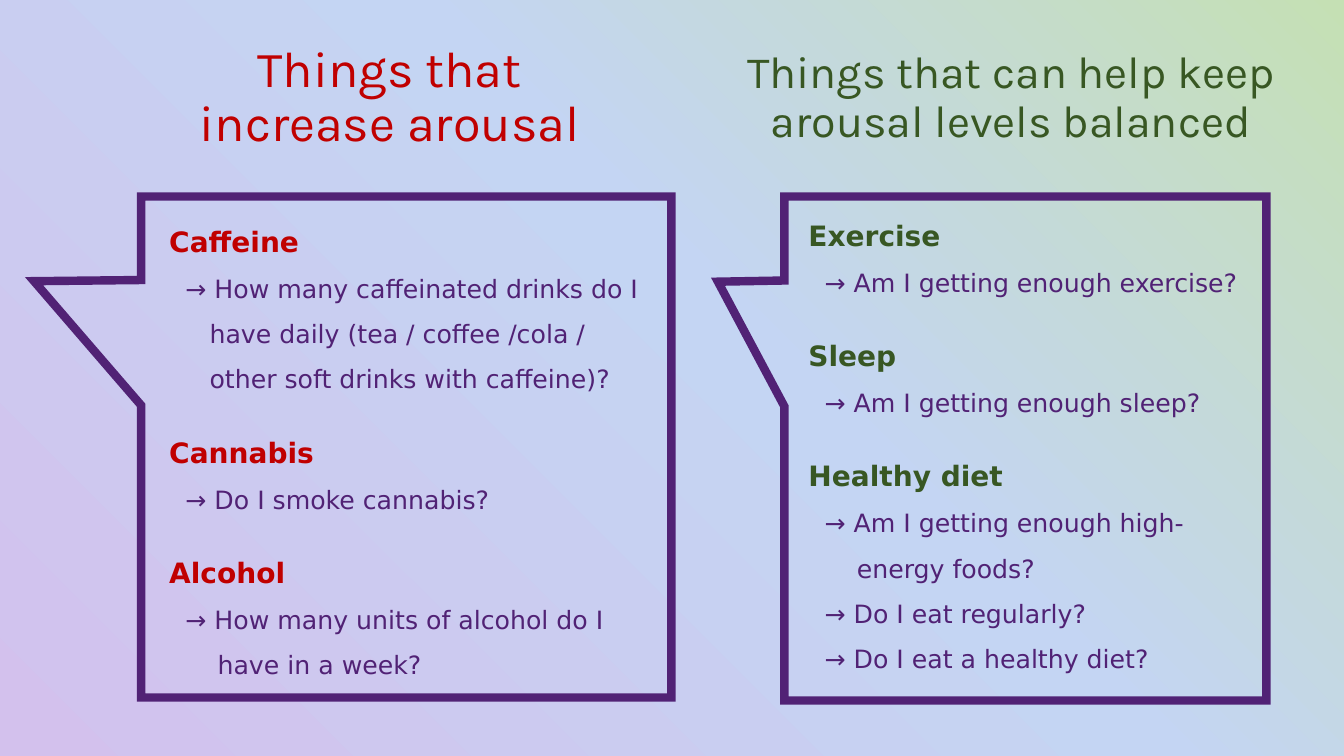
from dataclasses import dataclass
from pptx import Presentation
from pptx.dml.color import RGBColor
from pptx.enum.shapes import MSO_SHAPE as SHAPE
from pptx.enum.text import MSO_ANCHOR as ANCHOR, MSO_AUTO_SIZE as AUTO, PP_ALIGN as ALIGN
from pptx.oxml import parse_xml
from pptx.oxml.ns import nsdecls
from pptx.util import Inches, Pt


@dataclass(frozen=True)
class Theme:
    red: str = "C00000"
    green: str = "385723"
    purple: str = "512275"
    gradient: tuple = ((0, "D3C1ED"), (56, "C4D5F3"), (100, "C5E0B4"))
    title_font: str = "Karla"
    body_font: str = "DejaVu Sans"
    heading_size: int = 20
    question_size: int = 18
    border: int = 6


theme = Theme()
SLIDE = (13.33, 7.5)
ARROW_LEFT = 0.16
TOPIC_GAP = 17.5

panels = [
    dict(
        title="Things that increase arousal", title_size=36, color=theme.red,
        title_box=(1.58, 0.33, 4.57, 1.29), callout=(1.4, 1.95, 5.26, 4.97),
        pointer=(-0.702, -0.331), body=(1.58, 2.01, 5.08, 4.85),
        topics=[
            ("Caffeine", 0.4, [("How many caffeinated drinks do I",
                                "have daily (tea / coffee /cola /",
                                "other soft drinks with caffeine)?")]),
            ("Cannabis", 0.48, [("Do I smoke cannabis?",)]),
            ("Alcohol", 0.48, [("How many units of alcohol do I", "have in a week?")]),
        ],
    ),
    dict(
        title="Things that can help keep arousal levels balanced", title_size=32,
        color=theme.green,
        title_box=(6.91, 0.42, 6.24, 1.11), callout=(7.78, 1.95, 4.78, 5),
        pointer=(-0.638, -0.331), body=(7.92, 1.95, 4.63, 4.85),
        topics=[
            ("Exercise", 0.48, [("Am I getting enough exercise?",)]),
            ("Sleep", 0.48, [("Am I getting enough sleep?",)]),
            ("Healthy diet", 0.48, [("Am I getting enough high-", "energy foods?"),
                                    ("Do I eat regularly?",),
                                    ("Do I eat a healthy diet?",)]),
        ],
    ),
]


def inches(box):
    return [Inches(v) for v in box]


def add_run(p, text, font, size, color, bold=False):
    r = p.add_run()
    r.text = text
    r.font.name, r.font.size, r.font.bold = font, Pt(size), bold
    r.font.color.rgb = RGBColor.from_string(color)


def add_backdrop(s):
    sp = s.shapes.add_shape(SHAPE.RECTANGLE, 0, 0, *inches(SLIDE))
    sp.shadow.inherit = False
    sp.line.fill.background()
    sp.fill.background()
    stops = "".join(
        f'<a:gs pos="{pos * 1000}"><a:srgbClr val="{color}"/></a:gs>'
        for pos, color in theme.gradient
    )
    gradient = parse_xml(
        f'<a:gradFill {nsdecls("a")} rotWithShape="1"><a:gsLst>{stops}</a:gsLst>'
        '<a:path path="circle"><a:fillToRect t="100000" r="100000"/></a:path></a:gradFill>'
    )
    props = sp._element.spPr
    props.replace(props.find("{*}noFill"), gradient)
    return sp


def add_callout(s, panel):
    sp = s.shapes.add_shape(SHAPE.RECTANGULAR_CALLOUT, *inches(panel["callout"]))
    sp.shadow.inherit = False
    sp.fill.background()
    sp.line.color.rgb = RGBColor.from_string(theme.purple)
    sp.line.width = Pt(theme.border)
    sp.line._ln.append(parse_xml(f'<a:miter {nsdecls("a")} lim="800000"/>'))
    for i, value in enumerate(panel["pointer"]):
        sp.adjustments[i] = value


def fill_title(sp, panel):
    sp.left, sp.top, sp.width, sp.height = inches(panel["title_box"])
    tf = sp.text_frame
    tf.word_wrap, tf.auto_size = True, AUTO.NONE
    tf.vertical_anchor = ANCHOR.MIDDLE
    tf.margin_left = tf.margin_right = tf.margin_top = tf.margin_bottom = Inches(0.1)
    p = tf.paragraphs[0]
    p.alignment, p.line_spacing = ALIGN.CENTER, 0.9
    add_run(p, panel["title"], theme.title_font, panel["title_size"], panel["color"])


def add_topics(s, panel):
    tf = s.shapes.add_textbox(*inches(panel["body"])).text_frame
    tf.word_wrap = True
    for i, (heading, hang, questions) in enumerate(panel["topics"]):
        p = tf.add_paragraph() if i else tf.paragraphs[0]
        p.line_spacing, p.space_before = 1.5, Pt(TOPIC_GAP if i else 0)
        add_run(p, heading, theme.body_font, theme.heading_size, panel["color"], True)
        for lines in questions:
            p = tf.add_paragraph()
            p.line_spacing = 1.5
            pPr = p._p.get_or_add_pPr()
            pPr.set("marL", str(Inches(hang)))
            pPr.set("indent", str(Inches(ARROW_LEFT) - Inches(hang)))
            for j, line in enumerate(lines):
                if j:
                    p.add_line_break()
                add_run(p, line if j else f"→ {line}", theme.body_font,
                        theme.question_size, theme.purple)


def main():
    prs = Presentation()
    prs.slide_width, prs.slide_height = inches(SLIDE)
    s = prs.slides.add_slide(prs.slide_layouts[5])
    title = s.shapes.title
    title._element.addprevious(add_backdrop(s)._element)
    for i, panel in enumerate(panels):
        add_callout(s, panel)
        fill_title(s.shapes.add_textbox(0, 0, 0, 0) if i else title, panel)
        add_topics(s, panel)
    prs.save("out.pptx")


if __name__ == "__main__":
    main()
